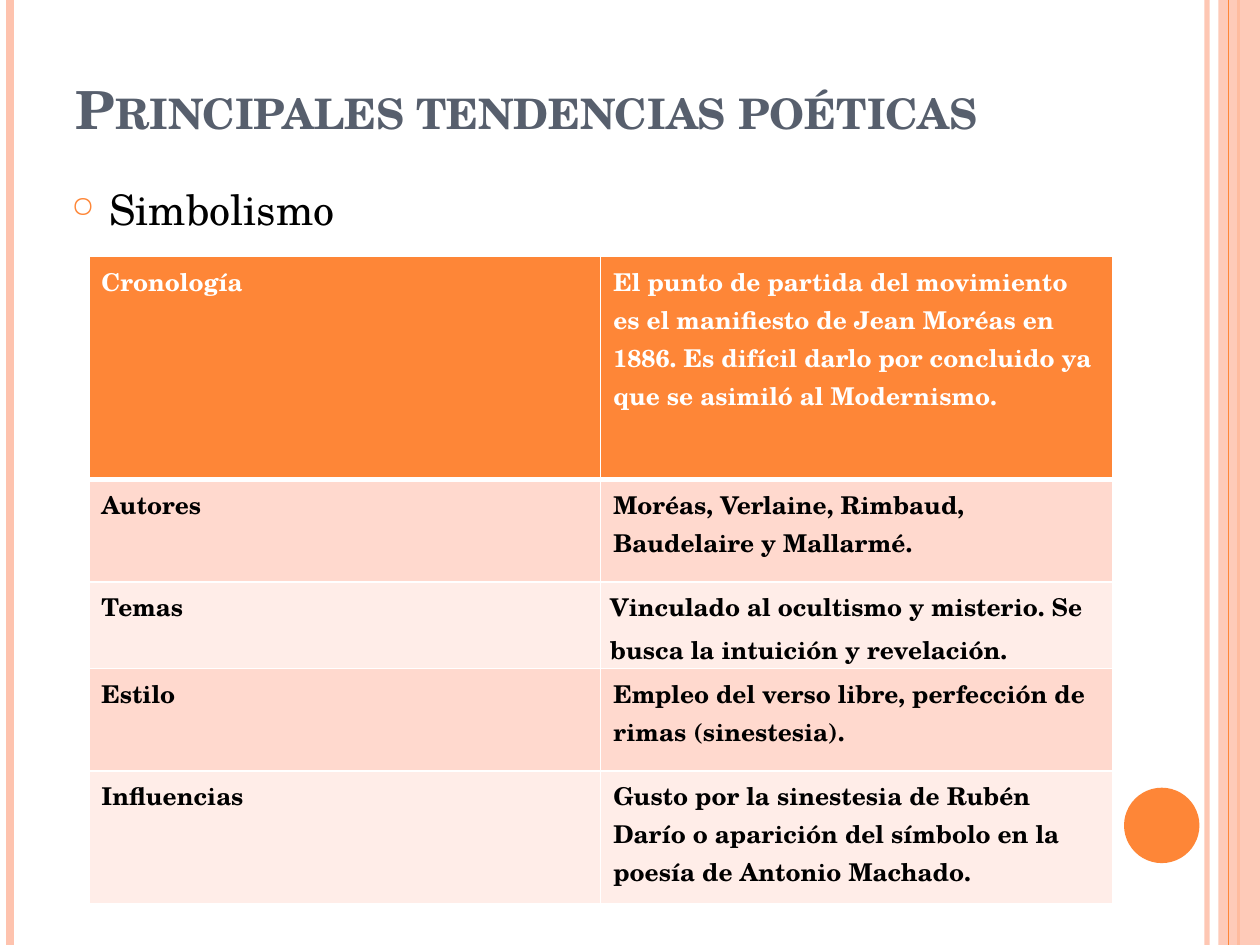
from dataclasses import dataclass

from lxml import etree
from pptx import Presentation
from pptx.dml.color import RGBColor
from pptx.enum.shapes import MSO_CONNECTOR, MSO_SHAPE
from pptx.enum.text import MSO_ANCHOR
from pptx.oxml.ns import qn
from pptx.util import Cm, Pt


@dataclass(frozen=True)
class Theme:
    font: str = "TeX Gyre Schola"
    accent: str = "FE8637"
    pale: str = "FEC3AE"
    bands: tuple = ("FFD9CE", "FFEDE8")
    heading: str = "575F6D"
    dark: str = "000000"
    light: str = "FFFFFF"
    title_size: int = 30
    body_size: int = 24
    table_size: int = 14


THEME = Theme()

# x in cm, colour, width in points, opacity in percent
RULES = [(24.33, THEME.pale, 3, 93), (0.2, THEME.pale, 4.5, 100), (24.97, THEME.accent, 1.5, 100)]
TOP_RULE = (24.77, THEME.accent, 0.75, 100)

ROWS = [
    ("Cronología", "El punto de partida del movimiento es el manifiesto de Jean Moréas en 1886. "
                   "Es difícil darlo por concluido ya que se asimiló al Modernismo."),
    ("Autores", "Moréas, Verlaine, Rimbaud, Baudelaire y Mallarmé."),
    ("Temas", "Vinculado al ocultismo y misterio. Se busca la intuición y revelación."),
    ("Estilo", "Empleo del verso libre, perfección de rimas (sinestesia)."),
    ("Influencias", "Gusto por la sinestesia de Rubén Darío o aparición del símbolo en la "
                    "poesía de Antonio Machado."),
]
ROW_HEIGHTS = (4.5, 2.06, 1.75, 2.06, 2.67)
TIGHT_ROW = 2


def set_attrs(obj, formats):
    for name, value in formats.items():
        setattr(obj, name, value)


def set_opacity(fill, percent):
    color = fill._xPr.find(qn("a:solidFill"))[0]
    etree.SubElement(color, qn("a:alpha")).set("val", str(percent * 1000))


def write(tf, text, size, color, bold=False):
    p = tf.paragraphs[0]
    r = p.add_run()
    r.text = text
    set_attrs(r.font, {"name": THEME.font, "size": Pt(size), "bold": bold})
    r.font.color.rgb = RGBColor.from_string(color)
    return p, r


def add_rule(slide, height, x, color, width, opacity):
    s = slide.shapes.add_connector(MSO_CONNECTOR.STRAIGHT, Cm(x), 0, Cm(x), height)
    s.line.color.rgb = RGBColor.from_string(color)
    s.line.width = Pt(width)
    if opacity < 100:
        set_opacity(s.line.fill, opacity)
    etree.SubElement(s._element.spPr, qn("a:effectLst"))


def add_plain_shape(slide, kind, color, *box):
    sp = slide.shapes.add_shape(kind, *box)
    sp.shadow.inherit = False
    sp.fill.solid()
    sp.fill.fore_color.rgb = RGBColor.from_string(color)
    sp.line.fill.background()
    return sp


def add_decoration(slide, width, height):
    for rule in RULES:
        add_rule(slide, height, *rule)
    band = Cm(0.84)
    side = add_plain_shape(slide, MSO_SHAPE.RECTANGLE, THEME.pale, width - band, 0, band, height)
    set_opacity(side.fill, 87)
    add_rule(slide, height, *TOP_RULE)
    add_plain_shape(slide, MSO_SHAPE.OVAL, THEME.accent, Cm(22.66), Cm(15.88), Cm(1.52), Cm(1.52))


def add_title(slide, text, *box):
    tf = slide.shapes.add_textbox(*box).text_frame
    set_attrs(tf, {"word_wrap": True, "vertical_anchor": MSO_ANCHOR.BOTTOM,
                   "margin_bottom": Cm(1.12)})
    _, r = write(tf, text, THEME.title_size, THEME.heading, bold=True)
    r._r.get_or_add_rPr().set("cap", "small")


def add_bullet_text(slide, text, *box):
    tf = slide.shapes.add_textbox(*box).text_frame
    tf.word_wrap = True
    p, _ = write(tf, text, THEME.body_size, THEME.dark)
    p.space_before = Pt(6)
    pPr = p._p.get_or_add_pPr()
    indent = Cm(0.76)
    pPr.set("marL", str(indent))
    pPr.set("indent", str(-indent))
    color = etree.SubElement(pPr, qn("a:buClr"))
    etree.SubElement(color, qn("a:srgbClr")).set("val", THEME.accent)
    etree.SubElement(pPr, qn("a:buSzPct")).set("val", "70000")
    etree.SubElement(pPr, qn("a:buChar")).set("char", "○")


def set_borders(cell, widths):
    tcPr = cell._tc.get_or_add_tcPr()
    for i, (side, width) in enumerate(widths.items()):
        ln = etree.Element(qn(f"a:ln{side}"), w=str(Pt(width)))
        fill = etree.SubElement(ln, qn("a:solidFill"))
        etree.SubElement(fill, qn("a:srgbClr")).set("val", THEME.light)
        tcPr.insert(i, ln)


def add_trend_table(slide, left, top, width):
    height = Cm(sum(ROW_HEIGHTS))
    table = slide.shapes.add_table(len(ROWS), 2, left, top, width, height).table
    for i, (row, row_height) in enumerate(zip(ROWS, ROW_HEIGHTS)):
        table.rows[i].height = Cm(row_height)
        header = i == 0
        fill = THEME.accent if header else THEME.bands[(i - 1) % 2]
        for j, text in enumerate(row):
            cell = table.cell(i, j)
            cell.fill.solid()
            cell.fill.fore_color.rgb = RGBColor.from_string(fill)
            color = THEME.light if header else THEME.dark
            p, _ = write(cell.text_frame, text, THEME.table_size, color, bold=True)
            if (i, j) == (TIGHT_ROW, 1):
                p.line_spacing = 1.15
                set_attrs(cell, {"margin_left": Cm(0.19), "margin_right": Cm(0.19),
                                 "margin_top": 0, "margin_bottom": 0})
            set_borders(cell, {"L": 1, "R": 1, "T": 3 if i == 1 else 1, "B": 3 if header else 1})


def main():
    prs = Presentation()
    prs.slide_width, prs.slide_height = Cm(25.4), Cm(19.05)
    slide = prs.slides.add_slide(prs.slide_layouts[6])
    add_decoration(slide, prs.slide_width, prs.slide_height)
    add_title(slide, "Principales tendencias poéticas", Cm(1.27), Cm(0.76), Cm(20.75), Cm(3.18))
    add_bullet_text(slide, "Simbolismo", Cm(1.19), Cm(3.58), Cm(20.75), Cm(13.54))
    add_trend_table(slide, Cm(1.79), Cm(5.17), Cm(20.64))
    prs.save("out.pptx")


if __name__ == "__main__":
    main()
